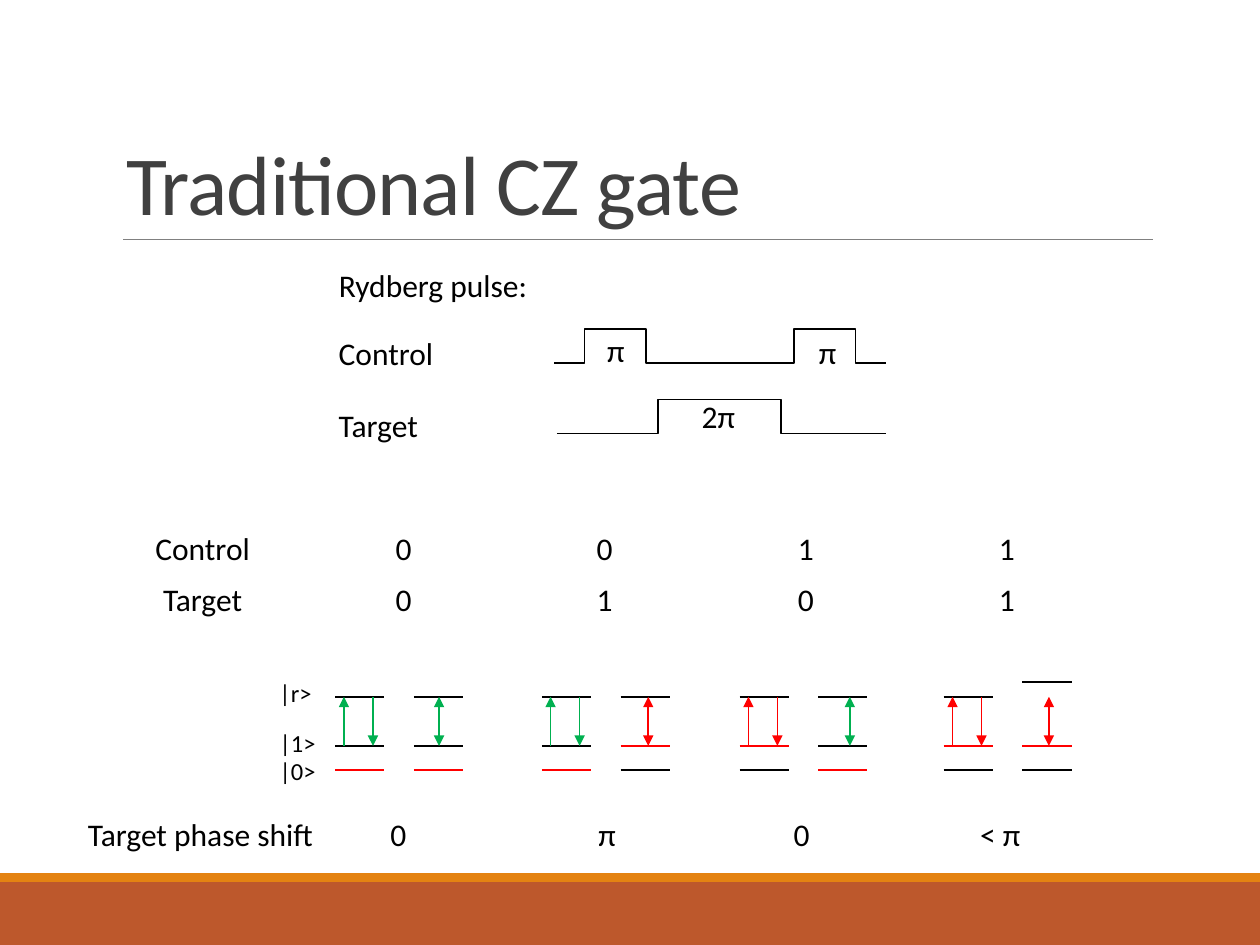
from lxml.etree import SubElement
from pptx import Presentation
from pptx.dml.color import RGBColor
from pptx.enum.shapes import MSO_CONNECTOR, MSO_SHAPE
from pptx.enum.text import MSO_ANCHOR, MSO_AUTO_SIZE, PP_ALIGN
from pptx.oxml.ns import qn
from pptx.util import Inches, Pt

BLACK = RGBColor(0x00, 0x00, 0x00)
RED = RGBColor(0xFF, 0x00, 0x00)
GREEN = RGBColor(0x00, 0xB0, 0x50)
GRAY = RGBColor(0x80, 0x80, 0x80)
TITLE_GRAY = RGBColor(0x40, 0x40, 0x40)
RUST = RGBColor(0xBD, 0x58, 0x2C)
ORANGE = RGBColor(0xE4, 0x83, 0x12)

# Content, lengths in inches
TITLE = "Traditional CZ gate"
BARS = [(7, 0.5, RUST), (6.93, 0.07, ORANGE)]
LABELS = [  # text, left, top, width, size
    ("Rydberg pulse:", 2.59, 2.06, 1.72, 18),
    ("Control", 2.59, 2.6, 0.96, 18),
    ("Target", 2.59, 3.17, 1.33, 18),
    ("π", 4.72, 2.58, 0.34, 18),
    ("π", 6.4, 2.59, 0.34, 18),
    ("2π", 5.47, 3.1, 0.47, 18),
    ("|r>", 2.12, 5.33, 0.46, 14),
    ("|1>", 2.12, 5.73, 0.49, 14),
    ("|0>", 2.12, 5.95, 0.49, 14),
]
PULSE_HEIGHT = 0.27
PULSES = [  # start, end, baseline, edges where the level flips
    (4.4, 7.03, 2.88, [4.64, 5.13, 6.3, 6.79]),
    (4.42, 7.03, 3.44, [5.22, 6.2]),
]
STATES = [("Control", "0", "0", "1", "1"), ("Target", "0", "1", "0", "1")]
PHASES = ["Target phase shift", "0", "π", "0", "< π"]
PHASE_TABS = [2.4, 4.05, 5.6, 7.08]

# Level diagrams: one pair of atoms for each state column
PAIR_LEFTS = [2.66, 4.3, 5.87, 7.49]
TARGET_ARROWS = [0.2, 0.22, 0.25, 0.21]
CONTROL_ARROWS = [0.07, 0.3]
ATOM_STEP, LEVEL_WIDTH = 0.625, 0.39
Y_R, Y_1, Y_0, Y_SHIFTED = 5.53, 5.92, 6.11, 5.41

prs = Presentation()
prs.slide_width, prs.slide_height = Inches(10), Inches(7.5)
s = prs.slides.add_slide(prs.slide_layouts[5])


def style(r, size, color=BLACK):
    for name, value in {"name": "Calibri", "size": Pt(size)}.items():
        setattr(r.font, name, value)
    r.font.color.rgb = color


def add_text(text, left, top, width, size, wrap=False):
    sp = s.shapes.add_textbox(Inches(left), Inches(top), Inches(width), Inches(size / 45))
    tf = sp.text_frame
    tf.word_wrap = wrap
    tf.auto_size = MSO_AUTO_SIZE.SHAPE_TO_FIT_TEXT
    r = tf.paragraphs[0].add_run()
    r.text = text
    style(r, size)
    return tf.paragraphs[0]


def add_line(x1, y1, x2, y2, color=BLACK, width=1, arrows=()):
    sp = s.shapes.add_connector(MSO_CONNECTOR.STRAIGHT, *map(Inches, (x1, y1, x2, y2)))
    sp.line.color.rgb = color
    sp.line.width = Pt(width)
    for end in arrows:
        SubElement(sp.line._get_or_add_ln(), qn(f"a:{end}")).set("type", "triangle")
    SubElement(sp._element.spPr, qn("a:effectLst"))


def add_pulse(start, end, base, edges):
    points, y = [(start, base)], base
    for x in edges:
        points.append((x, y))
        y = base - PULSE_HEIGHT if y == base else base
        points.append((x, y))
    points.append((end, base))
    points = [(Inches(x), Inches(y)) for x, y in points]
    builder = s.shapes.build_freeform(*points[0])
    builder.add_line_segments(points[1:], close=False)
    sp = builder.convert_to_shape()
    sp.shadow.inherit = False
    sp.fill.background()
    sp.line.color.rgb = BLACK
    sp.line.width = Pt(1)


def add_levels(left, bit, top=Y_R):
    for y, state in ((top, None), (Y_1, "1"), (Y_0, "0")):
        add_line(left, y, left + LEVEL_WIDTH, y, RED if state == bit else BLACK)


# Footer bars and title rule
for top, height, color in BARS:
    sp = s.shapes.add_shape(MSO_SHAPE.RECTANGLE, 0, Inches(top), prs.slide_width, Inches(height))
    sp.shadow.inherit = False
    sp.fill.solid()
    sp.fill.fore_color.rgb = color
    sp.line.fill.background()
add_line(0.98, 1.9, 9.15, 1.9, GRAY, 0.5)

# Title
title = s.shapes.title
for name, value in zip(("left", "top", "width", "height"), (0.9, 0.31, 8.25, 1.59)):
    setattr(title, name, Inches(value))
tf = title.text_frame
tf.text = TITLE
tf.vertical_anchor = MSO_ANCHOR.BOTTOM
tf.auto_size = MSO_AUTO_SIZE.NONE
p = tf.paragraphs[0]
p.alignment, p.line_spacing = PP_ALIGN.LEFT, 0.85
style(p.runs[0], 48, TITLE_GRAY)
p.runs[0].font._element.set("spc", "-50")

# Pulse sequence and labels
for pulse in PULSES:
    add_pulse(*pulse)
for label in LABELS:
    add_text(*label)

# Table of input states
table = s.shapes.add_table(2, 5, Inches(0.81), Inches(4.16), Inches(7.98), Inches(0.81)).table
table.first_row = table.horz_banding = False
for i, row in enumerate(STATES):
    for j, text in enumerate(row):
        cell = table.cell(i, j)
        cell.fill.background()
        p = cell.text_frame.paragraphs[0]
        p.alignment = PP_ALIGN.CENTER
        r = p.add_run()
        r.text = text
        style(r, 18)
        # No cell borders; they come before the fill in the cell's properties
        for k, side in enumerate(("lnL", "lnR", "lnT", "lnB")):
            ln = SubElement(cell._tc.tcPr, qn(f"a:{side}"))
            SubElement(ln, qn("a:noFill"))
            cell._tc.tcPr.insert(k, ln)

# Level diagrams: red marks the occupied level and resonant arrows
controls, targets = (row[1:] for row in STATES)
for left, control, target, offset in zip(PAIR_LEFTS, controls, targets, TARGET_ARROWS):
    right = left + ATOM_STEP
    blockaded = control == target == "1"
    add_levels(left, control)
    add_levels(right, target, Y_SHIFTED if blockaded else Y_R)
    color = RED if control == "1" else GREEN
    up, down = (left + dx for dx in CONTROL_ARROWS)
    add_line(up, Y_1, up, Y_R, color, arrows=["tailEnd"])
    add_line(down, Y_R, down, Y_1, color, arrows=["tailEnd"])
    x = right + offset
    add_line(x, Y_1, x, Y_R, RED if target == "1" else GREEN, arrows=["headEnd", "tailEnd"])

# Phase shift row, aligned with tab stops
p = add_text("\t".join(PHASES), 0.6, 6.42, 8.06, 18, wrap=True)
tabs = SubElement(p._p.get_or_add_pPr(), qn("a:tabLst"))
for pos in PHASE_TABS:
    tab = SubElement(tabs, qn("a:tab"))
    tab.set("pos", str(Inches(pos)))
    tab.set("algn", "l")

prs.save("out.pptx")
